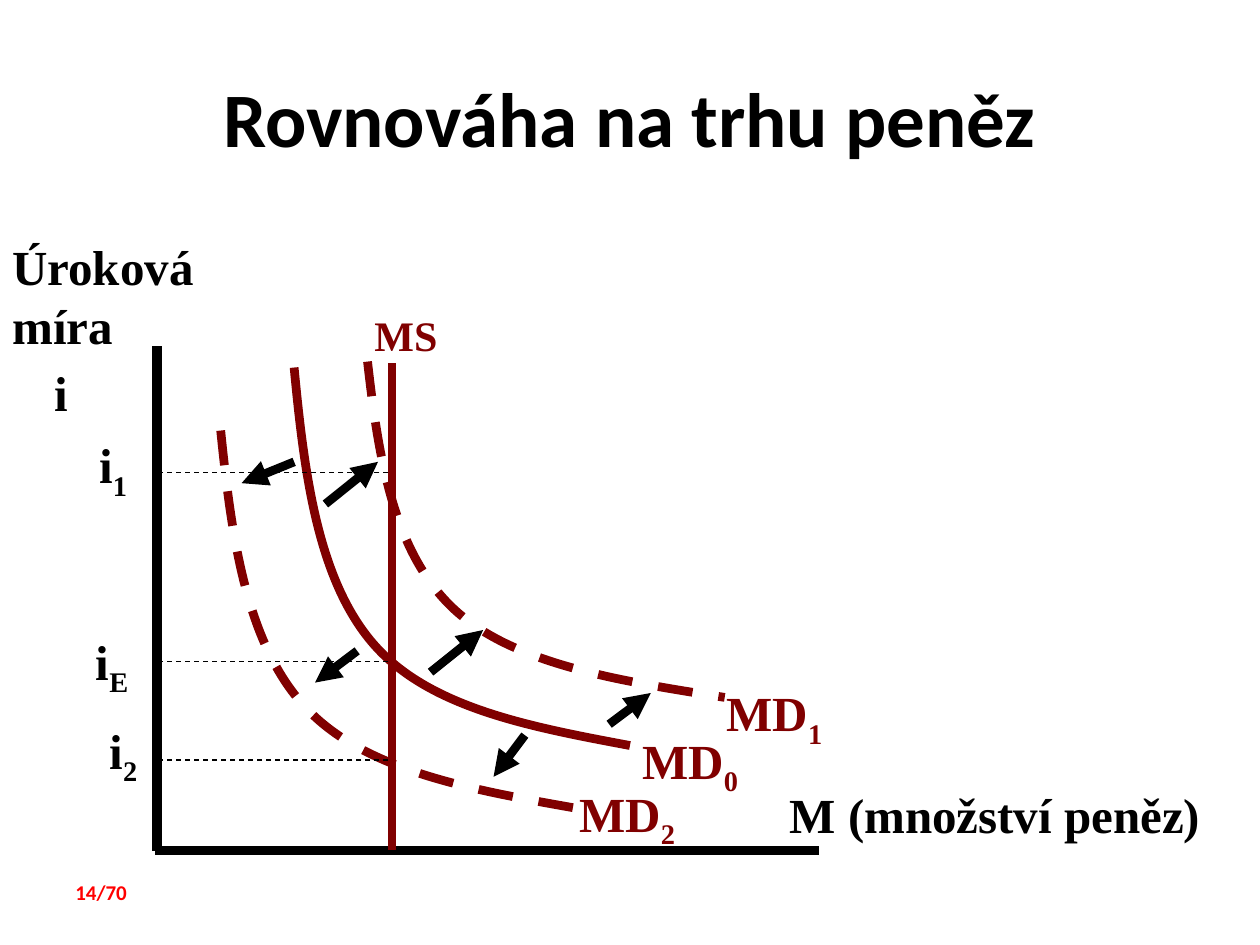
from dataclasses import dataclass

from lxml.etree import SubElement
from pptx import Presentation
from pptx.dml.color import RGBColor
from pptx.enum.dml import MSO_LINE_DASH_STYLE as Dash
from pptx.enum.shapes import MSO_CONNECTOR as Connector
from pptx.enum.text import MSO_ANCHOR as Anchor, MSO_AUTO_SIZE as AutoSize, PP_ALIGN as Align
from pptx.oxml.ns import qn
from pptx.util import Cm, Pt


@dataclass(frozen=True)
class Theme:
    ink: RGBColor = RGBColor(0, 0, 0)
    curve: RGBColor = RGBColor(0x80, 0, 0)
    page: RGBColor = RGBColor(0xFF, 0, 0)
    serif: str = "Times New Roman"
    sans: str = "Calibri"
    title_size: int = 44
    label_size: int = 28
    supply_size: int = 24
    page_size: int = 12
    thick: float = 5
    axis: float = 5.5
    thin: float = 0.75


# Bézier points of a demand curve, as fractions of its width and height
DEMAND = [(0, 0), (0.03, 0.28), (0.07, 0.56), (0.235, 0.73),
          (0.4, 0.9), (0.7, 0.95), (1, 1)]


def bend(curve):
    """Turn each three straight segments of a freeform into one cubic Bézier."""
    segments = list(curve._element.iter(qn("a:lnTo")))
    for first in range(0, len(segments), 3):
        outline = segments[first].getparent()
        cubic = SubElement(outline, qn("a:cubicBezTo"))
        for segment in segments[first:first + 3]:
            cubic.append(segment[0])
            outline.remove(segment)


class Diagram:
    def __init__(self, slide, theme):
        self.slide = slide
        self.theme = theme

    def text(self, box, words, size, color, font, sub=""):
        frame = self.slide.shapes.add_textbox(*map(Cm, box)).text_frame
        frame.word_wrap = True
        frame.auto_size = AutoSize.SHAPE_TO_FIT_TEXT
        for part in filter(None, (words, sub)):
            run = frame.paragraphs[0].add_run()
            run.text = part
            run.font.size = Pt(size)
            run.font.name = font
            run.font.bold = True
            run.font.color.rgb = color
        if sub:
            run.font._element.set("baseline", "-25000")
        return frame

    def title(self, box, words):
        theme = self.theme
        frame = self.text(box, words, theme.title_size, theme.ink, theme.sans)
        frame.auto_size = AutoSize.NONE
        frame.vertical_anchor = Anchor.MIDDLE
        frame.paragraphs[0].alignment = Align.CENTER

    def label(self, box, words, sub="", color=None, size=None):
        theme = self.theme
        self.text(box, words, size or theme.label_size, color or theme.ink,
                  theme.serif, sub)

    def line(self, start, end, width, color=None, dashed=False, arrow=False):
        connector = self.slide.shapes.add_connector(
            Connector.STRAIGHT, *map(Cm, (*start, *end)))
        self.stroke(connector.line, width, color or self.theme.ink, dashed)
        properties = connector._element.spPr
        if arrow:
            SubElement(properties.find(qn("a:ln")), qn("a:tailEnd"), type="triangle")
        SubElement(properties, qn("a:effectLst"))

    def demand(self, left, top, width, height, dashed=False):
        points = [(Cm(left + x * width), Cm(top + y * height)) for x, y in DEMAND]
        builder = self.slide.shapes.build_freeform(*points[0])
        builder.add_line_segments(points[1:], close=False)
        curve = builder.convert_to_shape()
        bend(curve)
        curve.shadow.inherit = False
        curve.fill.background()
        self.stroke(curve.line, self.theme.thick, self.theme.curve, dashed)

    @staticmethod
    def stroke(line, width, color, dashed):
        line.width = Pt(width)
        line.color.rgb = color
        if dashed:
            line.dash_style = Dash.DASH


def main():
    deck = Presentation()
    deck.slide_width, deck.slide_height = Cm(25.4), Cm(19.05)
    theme = Theme()
    diagram = Diagram(deck.slides.add_slide(deck.slide_layouts[6]), theme)

    diagram.label((0, 4.65, 5.72, 2.62), "Úroková míra")
    diagram.label((15.67, 15.7, 9.09, 1.45), "M (množství peněz)")

    axis_x, axis_y, supply_x = 3.17, 17.15, 7.9
    diagram.line((axis_x, 6.98), (axis_x, axis_y), theme.axis)
    diagram.line((3.13, axis_y), (16.51, axis_y), theme.thick)

    demands = [
        ("0", (5.93, 7.41, 6.77, 7.62), (12.7, 14.6, 2.97, 1.45)),
        ("1", (7.41, 7.29, 7.2, 6.77), (14.4, 13.64, 2.97, 1.45)),
        ("2", (4.45, 8.68, 7.2, 7.62), (11.43, 15.67, 3.61, 1.45)),
    ]
    for index, curve, label in demands:
        diagram.demand(*curve, dashed=index != "0")
        diagram.label(label, "MD", index, theme.curve)

    shifts = [
        ((7.2, 13.12), (6.35, 13.76)),
        ((10.58, 14.82), (9.95, 15.66)),
        ((5.93, 9.31), (4.87, 9.74)),
        ((8.68, 13.55), (9.74, 12.7)),
        ((6.56, 10.16), (7.62, 9.31)),
        ((12.28, 14.6), (13.12, 13.97)),
    ]
    for start, end in shifts:
        diagram.line(start, end, theme.thick, arrow=True)

    diagram.label((0.84, 7.19, 1.7, 1.45), "i")
    diagram.line((supply_x, 17.13), (supply_x, 7.32), theme.thick, theme.curve)
    diagram.label((7.3, 6.12, 3.61, 1.27), "MS", color=theme.curve,
                  size=theme.supply_size)

    rates = [("E", 13.33, 1.68, 12.6), ("1", 9.53, 1.75, 8.64), ("2", 15.32, 1.96, 14.4)]
    for index, level, left, top in rates:
        diagram.line((7.83, level), (axis_x, level), theme.thin, dashed=True)
        diagram.label((left, top, 3.12, 1.45), "i", index)

    diagram.title((1.27, 0.76, 22.86, 3.18), "Rovnováha na trhu peněz")
    diagram.text((1.27, 17.6, 2.34, 0.76), "14/70",
                 theme.page_size, theme.page, theme.sans)
    deck.save("out.pptx")


if __name__ == "__main__":
    main()
